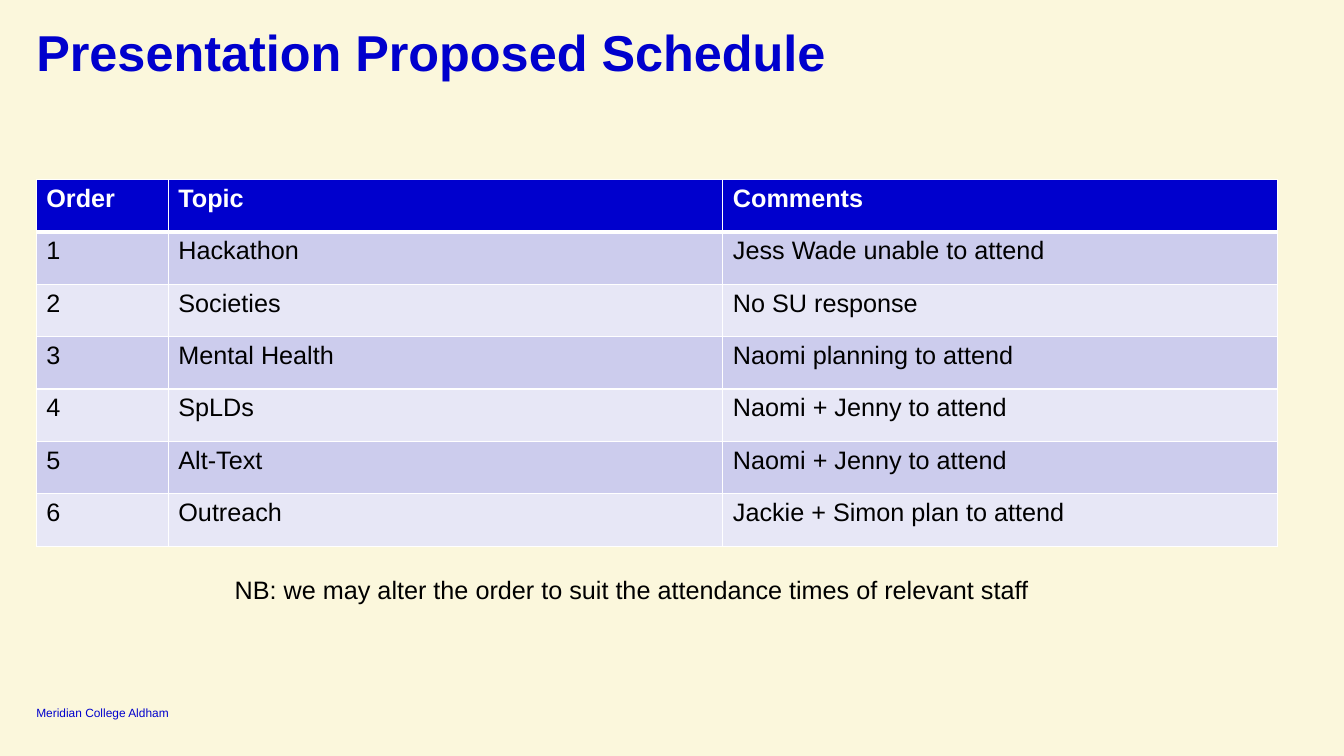
from lxml import etree
from pptx import Presentation
from pptx import util as u
from pptx.dml.color import RGBColor
from pptx.enum import text
from pptx.oxml.ns import qn

BLUE, WHITE, BLACK, CREAM = "0000CD", "FFFFFF", "000000", "FBF7DC"
BANDS = ("CCCCED", "E7E7F6")

SCHEDULE = [
    ("Order", "Topic", "Comments"),
    ("1", "Hackathon", "Jess Wade unable to attend"),
    ("2", "Societies", "No SU response"),
    ("3", "Mental Health", "Naomi planning to attend"),
    ("4", "SpLDs", "Naomi + Jenny to attend"),
    ("5", "Alt-Text", "Naomi + Jenny to attend"),
    ("6", "Outreach", "Jackie + Simon plan to attend"),
]


def color(hex_code):
    return RGBColor.from_string(hex_code)


class Deck:
    def __init__(self, background, font="Arial"):
        self.font = font
        self.prs = Presentation()
        self.prs.slide_width = u.Inches(13.33)
        self.prs.slide_height = u.Inches(7.5)
        self.slide = self.prs.slides.add_slide(self.prs.slide_layouts[6])
        fill = self.slide.background.fill
        fill.solid()
        fill.fore_color.rgb = color(background)

    def style(self, paragraph, size, ink, bold=False):
        font = paragraph.font
        font.name, font.size, font.bold = self.font, u.Pt(size), bold
        font.color.rgb = color(ink)

    def label(self, words, box, size, ink, bold=False, inset=True,
              anchor=text.MSO_ANCHOR.TOP, spacing=None):
        frame = self.slide.shapes.add_textbox(*map(u.Inches, box)).text_frame
        frame.word_wrap = True
        frame.vertical_anchor = anchor
        if not inset:
            frame.margin_left = frame.margin_right = 0
            frame.margin_top = frame.margin_bottom = 0
        paragraph = frame.paragraphs[0]
        paragraph.text = words
        paragraph.line_spacing = spacing
        self.style(paragraph, size, ink, bold)

    def borders(self, cell, **widths):
        """Draw white cell edges; widths are points keyed by L, R, T and B."""
        properties = cell._tc.get_or_add_tcPr()
        for index, side in enumerate("LRTB"):
            line = etree.Element(qn(f"a:ln{side}"), w=str(u.Pt(widths.get(side, 1))))
            fill = etree.SubElement(line, qn("a:solidFill"))
            etree.SubElement(fill, qn("a:srgbClr"), val=WHITE)
            properties.insert(index, line)

    def table(self, rows, left, top, column_widths, row_height, size):
        box = (left, top, sum(column_widths), row_height * len(rows))
        grid = self.slide.shapes.add_table(
            len(rows), len(column_widths), *map(u.Inches, box)).table
        for column, width in zip(grid.columns, column_widths):
            column.width = u.Inches(width)
        for r, row in enumerate(rows):
            grid.rows[r].height = u.Inches(row_height)
            header = r == 0
            for c, words in enumerate(row):
                cell = grid.cell(r, c)
                cell.text = words
                cell.fill.solid()
                cell.fill.fore_color.rgb = color(BLUE if header else BANDS[(r - 1) % 2])
                self.style(cell.text_frame.paragraphs[0], size,
                           WHITE if header else BLACK, header)
                self.borders(cell, T=3 if r == 1 else 1, B=3 if header else 1)


def main():
    deck = Deck(CREAM)
    deck.label("Meridian College Aldham", (0.36, 6.99, 1.55, 0.15), 8.5, BLUE,
               inset=False, anchor=text.MSO_ANCHOR.BOTTOM)
    deck.label("Presentation Proposed Schedule", (0.36, 0.28, 12.62, 0.41), 36, BLUE,
               bold=True, inset=False, spacing=0.9)
    deck.table(SCHEDULE, 0.36, 1.78, (1.31, 5.5, 5.5), 0.52, 18)
    deck.label("NB: we may alter the order to suit the attendance times of relevant staff",
               (2.23, 5.65, 8.86, 0.4), 18, BLACK)
    deck.prs.save("out.pptx")


if __name__ == "__main__":
    main()
